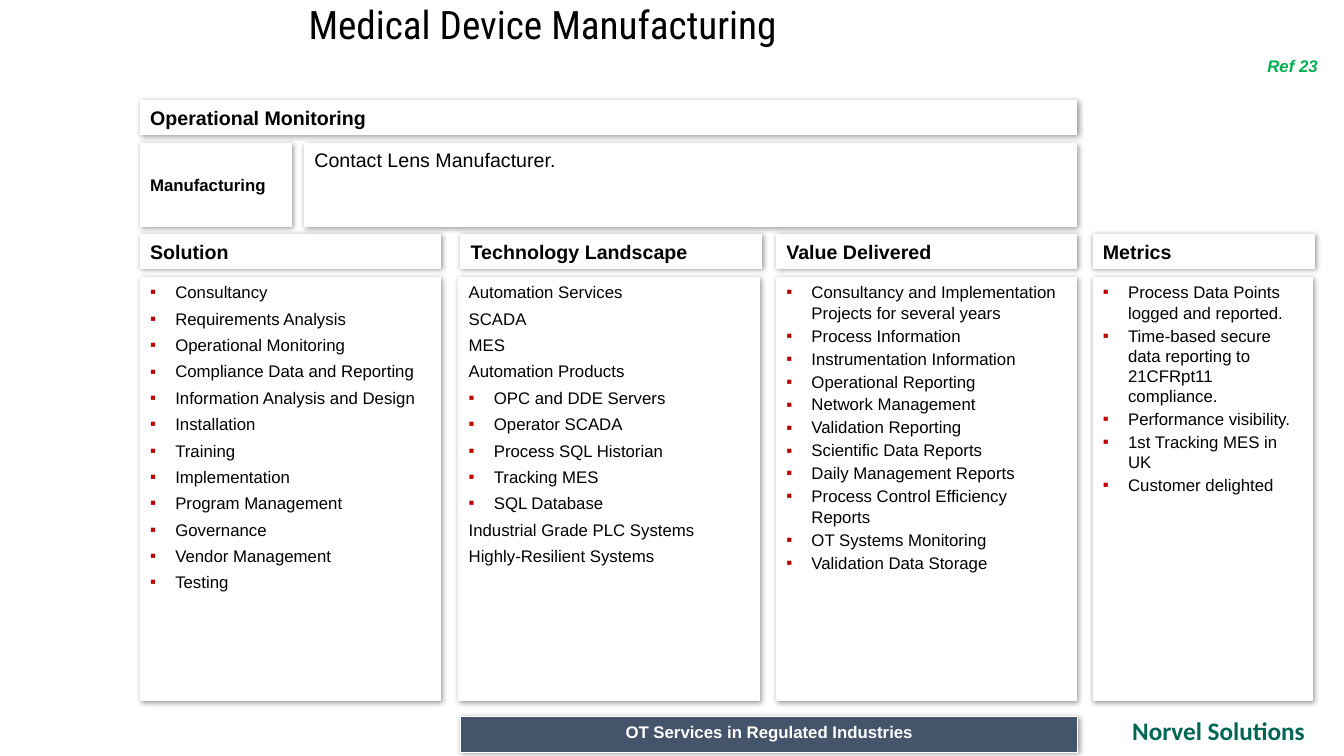
from lxml.etree import SubElement
from pptx import Presentation
from pptx.dml.color import RGBColor
from pptx.enum.shapes import MSO_SHAPE
from pptx.enum.text import MSO_ANCHOR, PP_ALIGN
from pptx.oxml.ns import qn
from pptx.util import Inches, Pt

COLORS = {"black": "000000", "white": "FFFFFF", "bullet": "C00000",
          "slate": "44546A", "ref": "00B050", "company": "016656"}

LEFT, COLUMN_WIDTH = 1.39, 2.98
HEADING_TOP, HEADING_HEIGHT = 2.33, 0.33
LIST_TOP, LIST_HEIGHT = 2.75, 4.2
MAIN_WIDTH = 9.29

SOLUTION = ["Consultancy", "Requirements Analysis", "Operational Monitoring",
            "Compliance Data and Reporting", "Information Analysis and Design",
            "Installation", "Training", "Implementation", "Program Management",
            "Governance", "Vendor Management", "Testing"]
TECHNOLOGY = ["Automation Services", "SCADA", "MES", "Automation Products",
              "OPC and DDE Servers", "Operator SCADA", "Process SQL Historian",
              "Tracking MES", "SQL Database", "Industrial Grade PLC Systems",
              "Highly-Resilient Systems"]
TECHNOLOGY_BULLETS = range(4, 9)
VALUE = ["Consultancy and Implementation Projects for several years",
         "Process Information", "Instrumentation Information",
         "Operational Reporting", "Network Management", "Validation Reporting",
         "Scientific Data Reports", "Daily Management Reports",
         "Process Control Efficiency Reports", "OT Systems Monitoring",
         "Validation Data Storage"]
METRICS = ["Process Data Points logged and reported.",
           "Time-based secure data reporting to 21CFRpt11 compliance.",
           "Performance visibility.", "1st Tracking MES in UK",
           "Customer delighted"]

# heading, heading left, heading width, list left, list width, items,
# indexes of bulleted items, space before
COLUMNS = [
    ("Solution", LEFT, COLUMN_WIDTH, LEFT, COLUMN_WIDTH,
     SOLUTION, range(len(SOLUTION)), 2.4),
    ("Technology Landscape", 4.57, COLUMN_WIDTH, 4.55, COLUMN_WIDTH,
     TECHNOLOGY, TECHNOLOGY_BULLETS, 2.4),
    ("Value Delivered", 7.7, COLUMN_WIDTH, 7.7, COLUMN_WIDTH,
     VALUE, range(len(VALUE)), 0),
    ("Metrics", 10.84, 2.2, 10.84, 2.18,
     METRICS, range(len(METRICS)), 0),
]


def rgb(name):
    return RGBColor.from_string(COLORS[name])


def write(paragraph, text, size, color="black", bold=False, italic=False,
          font="Arial", align=PP_ALIGN.LEFT):
    paragraph.alignment = align
    run = paragraph.add_run()
    run.text = text
    run.font.name, run.font.size = font, Pt(size)
    run.font.bold, run.font.italic = bold, italic
    run.font.color.rgb = rgb(color)


def add_bullet(paragraph):
    properties = paragraph._p.get_or_add_pPr()
    properties.set("marL", str(Inches(0.25)))
    properties.set("indent", str(-Inches(0.25)))
    bullet_color = SubElement(properties, qn("a:buClr"))
    SubElement(bullet_color, qn("a:srgbClr"), val=COLORS["bullet"])
    SubElement(properties, qn("a:buFont"), typeface="Arial")
    SubElement(properties, qn("a:buChar"), char="▪")


def add_shadow(shape):
    shape.shadow.inherit = False
    effects = shape._element.spPr.find(qn("a:effectLst"))
    shadow = SubElement(effects, qn("a:outerShdw"), blurRad=str(Pt(4)),
                        dist=str(Pt(1)), dir=str(45 * 60000), algn="tl",
                        rotWithShape="0")
    shade = SubElement(shadow, qn("a:srgbClr"), val=COLORS["black"])
    SubElement(shade, qn("a:alpha"), val="40000")


def add_card(slide, left, top, width, height, fill="white",
             anchor=MSO_ANCHOR.TOP):
    """Add a shadowed panel and return its text frame."""
    card = slide.shapes.add_shape(MSO_SHAPE.RECTANGLE, Inches(left),
                                  Inches(top), Inches(width), Inches(height))
    card.fill.solid()
    card.fill.fore_color.rgb = rgb(fill)
    card.line.color.rgb = rgb("white")
    card.line.width = Pt(0.5)
    add_shadow(card)
    card.text_frame.word_wrap = True
    card.text_frame.vertical_anchor = anchor
    return card.text_frame


def clear_margins(frame):
    frame.margin_left = frame.margin_right = 0
    frame.margin_top = frame.margin_bottom = 0


def add_title(slide, left, top, width, height):
    title = slide.shapes.title
    title.left, title.top = Inches(left), Inches(top)
    title.width, title.height = Inches(width), Inches(height)
    frame = title.text_frame
    clear_margins(frame)
    frame.vertical_anchor = MSO_ANCHOR.TOP
    write(frame.paragraphs[0], "Medical Device Manufacturing", 28,
          font="Roboto Condensed")


def add_reference(slide, left, top, width, height):
    reference = slide.shapes.add_textbox(Inches(left), Inches(top),
                                         Inches(width), Inches(height))
    clear_margins(reference.text_frame)
    reference.text_frame.word_wrap = True
    write(reference.text_frame.paragraphs[0], "Ref 23", 12, "ref",
          bold=True, italic=True)


def add_overview(slide, left, top, width):
    banner = add_card(slide, left, top, width, HEADING_HEIGHT)
    write(banner.paragraphs[0], "Operational Monitoring", 14, bold=True)
    # Sector label and client description
    row_top, row_height, client_offset = top + 0.42, 0.83, 1.63
    sector = add_card(slide, left, row_top, 1.5, row_height,
                      anchor=MSO_ANCHOR.MIDDLE)
    write(sector.paragraphs[0], "Manufacturing", 12, bold=True)
    client = add_card(slide, left + client_offset, row_top,
                      width - client_offset, row_height)
    write(client.paragraphs[0], "Contact Lens Manufacturer.", 14)


def add_column(slide, heading, heading_left, heading_width, list_left,
               list_width, items, bulleted, space_before):
    heading_frame = add_card(slide, heading_left, HEADING_TOP, heading_width,
                             HEADING_HEIGHT)
    write(heading_frame.paragraphs[0], heading, 14, bold=True)
    list_frame = add_card(slide, list_left, LIST_TOP, list_width, LIST_HEIGHT)
    for index, item in enumerate(items):
        first = index == 0
        paragraph = (list_frame.paragraphs[0] if first
                     else list_frame.add_paragraph())
        paragraph.space_before = Pt(0 if first else space_before)
        paragraph.space_after = Pt(2)
        if index in bulleted:
            add_bullet(paragraph)
        write(paragraph, item, 12)


def add_footer(slide, left, top, width, height):
    services = add_card(slide, left, top, width, height, fill="slate")
    write(services.paragraphs[0], "OT Services in Regulated Industries", 12,
          "white", bold=True, align=PP_ALIGN.CENTER)
    company = slide.shapes.add_textbox(Inches(10.05), Inches(top - 0.06),
                                       Inches(2.99), Inches(0.4))
    company.text_frame.word_wrap = True
    write(company.text_frame.paragraphs[0], "Norvel Solutions", 18, "company",
          bold=True, font="Calibri", align=PP_ALIGN.RIGHT)


def main():
    presentation = Presentation()
    presentation.slide_width = Inches(13.33)
    presentation.slide_height = Inches(7.5)
    slide = presentation.slides.add_slide(presentation.slide_layouts[5])
    add_title(slide, 3.06, 0, 7.78, 0.47)
    add_reference(slide, 12.57, 0.55, 0.76, 0.2)
    add_overview(slide, LEFT, 1, MAIN_WIDTH)
    for column in COLUMNS:
        add_column(slide, *column)
    add_footer(slide, 4.57, 7.11, 6.12, 0.35)
    presentation.save("out.pptx")


if __name__ == "__main__":
    main()
